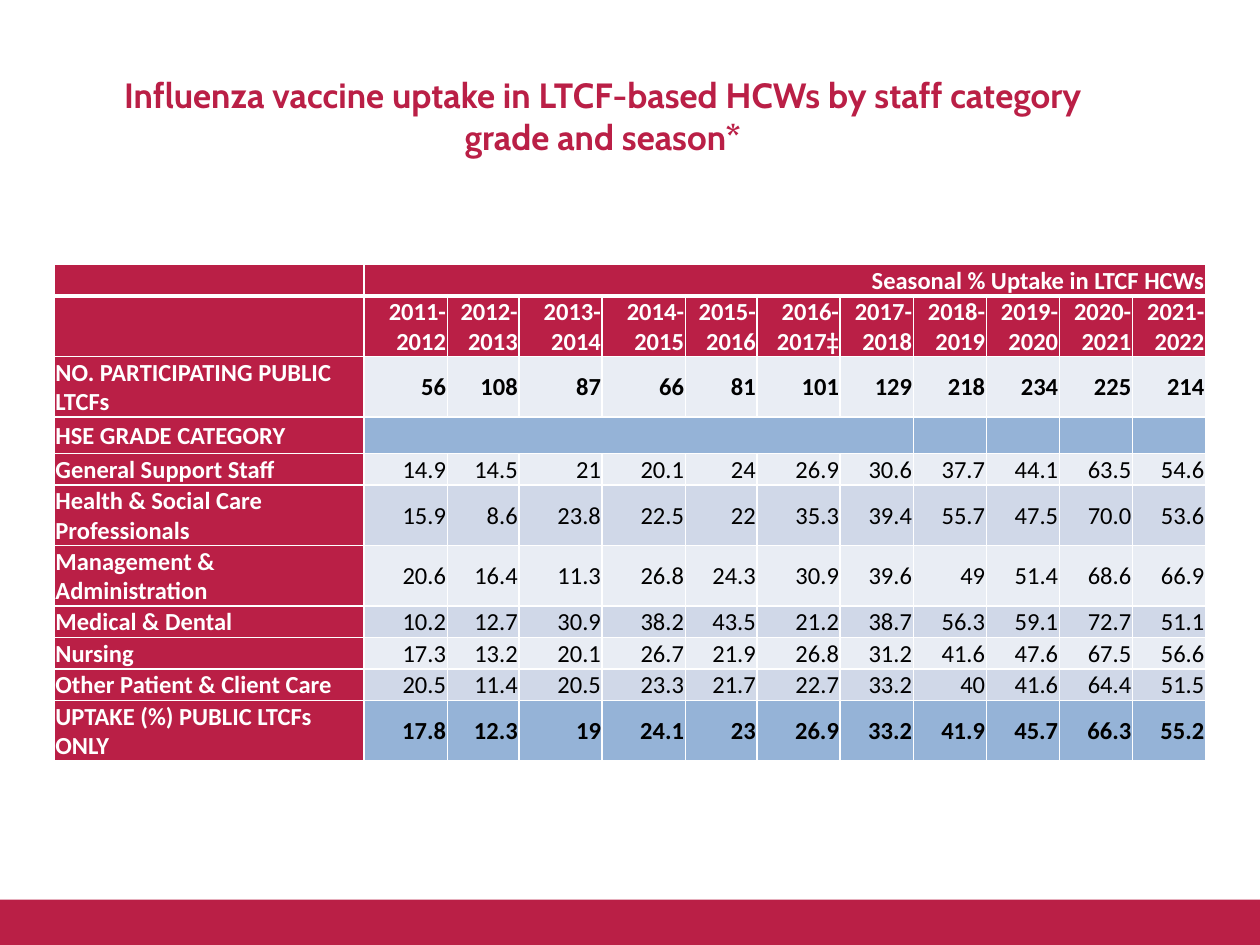
import pptx
import pptx.util
import pptx.dml.color
import pptx.enum.shapes
import pptx.enum.text
import pptx.oxml
import pptx.oxml.ns

Inches = pptx.util.Inches
Pt = pptx.util.Pt
Align = pptx.enum.text.PP_ALIGN
Anchor = pptx.enum.text.MSO_ANCHOR

RED, WHITE, BLACK = "BA1F46", "FFFFFF", "000000"
LIGHT, DARK, BLUE = "E9EDF4", "D0D8E8", "95B3D7"
COLS = [2.46, 0.66, 0.57, 0.66, 0.66, 0.57, 0.66] + [0.58] * 5
YEARS = [f"{y}-{y + 1}" + ("‡" if y == 2016 else "") for y in range(2011, 2022)]
TALL, SHORT = 0.48, 0.25
ROWS = [
    (SHORT, RED, True, "", ["Seasonal % Uptake in LTCF HCWs"]),
    (TALL, RED, True, "", YEARS),
    (TALL, LIGHT, True, "NO. PARTICIPATING PUBLIC LTCFs",
     "56 108 87 66 81 101 129 218 234 225 214".split()),
    (0.29, BLUE, True, "HSE GRADE CATEGORY", []),
    (SHORT, LIGHT, False, "General Support Staff",
     "14.9 14.5 21 20.1 24 26.9 30.6 37.7 44.1 63.5 54.6".split()),
    (TALL, DARK, False, "Health & Social Care Professionals",
     "15.9 8.6 23.8 22.5 22 35.3 39.4 55.7 47.5 70.0 53.6".split()),
    (TALL, LIGHT, False, "Management & Administration",
     "20.6 16.4 11.3 26.8 24.3 30.9 39.6 49 51.4 68.6 66.9".split()),
    (SHORT, DARK, False, "Medical & Dental",
     "10.2 12.7 30.9 38.2 43.5 21.2 38.7 56.3 59.1 72.7 51.1".split()),
    (SHORT, LIGHT, False, "Nursing",
     "17.3 13.2 20.1 26.7 21.9 26.8 31.2 41.6 47.6 67.5 56.6".split()),
    (SHORT, DARK, False, "Other Patient & Client Care",
     "20.5 11.4 20.5 23.3 21.7 22.7 33.2 40 41.6 64.4 51.5".split()),
    (TALL, BLUE, True, "UPTAKE (%) PUBLIC LTCFs ONLY",
     "17.8 12.3 19 24.1 23 26.9 33.2 41.9 45.7 66.3 55.2".split()),
]


def color(code):
    """Turn a hex string into a colour."""
    return pptx.dml.color.RGBColor.from_string(code)


def paint(part, code):
    """Fill a shape or cell with one colour."""
    part.fill.solid()
    part.fill.fore_color.rgb = color(code)


def write(frame, text, size=14, font="Calibri", ink=BLACK, bold=True,
          align=Align.LEFT):
    """Put formatted text in a frame; empty text keeps only its size."""
    para = frame.paragraphs[0]
    para.alignment = align
    if not text:
        end = pptx.oxml.ns.qn("a:endParaRPr")
        para._p.get_or_add_endParaRPr().set("sz", str(size * 100)) if hasattr(
            para._p, "get_or_add_endParaRPr") else para._p.append(
            para._p.makeelement(end, {"sz": str(size * 100)}))
        return
    run = para.add_run()
    run.text = text
    run.font.size = Pt(size)
    run.font.name = font
    run.font.bold = bold
    run.font.color.rgb = color(ink)


def border(cell, top=1, bottom=1):
    """Draw white lines around a cell, widths in points."""
    sides = [("L", 1), ("R", 1), ("T", top), ("B", bottom)]
    space = pptx.oxml.ns.nsdecls("a")
    for spot, (side, width) in enumerate(sides):
        line = pptx.oxml.parse_xml(
            f'<a:ln{side} {space} w="{Pt(width)}"><a:solidFill>'
            f'<a:srgbClr val="{WHITE}"/></a:solidFill></a:ln{side}>')
        cell._tc.get_or_add_tcPr().insert(spot, line)


def title(slide, left, top, width, height):
    """Place the slide title."""
    frame = slide.shapes.add_textbox(left, top, width, height).text_frame
    frame.word_wrap = True
    frame.vertical_anchor = Anchor.MIDDLE
    write(frame, "Influenza vaccine uptake in LTCF-based HCWs by staff "
          "category grade and season*", size=20, font="Cabin", ink=RED,
          align=Align.CENTER)


def footer(slide, left, top, width, height):
    """Place the plain band at the foot."""
    kind = pptx.enum.shapes.MSO_SHAPE.RECTANGLE
    band = slide.shapes.add_shape(kind, left, top, width, height)
    band.shadow.inherit = False
    paint(band, RED)
    band.line.fill.background()


def uptake(slide, left, top, width, height):
    """Place the table of uptake by grade and season."""
    grid = slide.shapes.add_table(
        len(ROWS), len(COLS), left, top, width, height).table
    grid.first_row = grid.horz_banding = False
    for col, size in zip(grid.columns, COLS):
        col.width = Inches(size)
    for r, (size, fill, bold, label, values) in enumerate(ROWS):
        grid.rows[r].height = Inches(size)
        texts = [label] + values
        texts += [""] * (len(COLS) - len(texts))
        for c, text in enumerate(texts):
            cell = grid.cell(r, c)
            back = fill if c else RED
            paint(cell, back)
            border(cell, top=3 if r == 1 else 1, bottom=1 if r else 3)
            cell.margin_left = cell.margin_right = Inches(0.01)
            cell.margin_top, cell.margin_bottom = Inches(0.01), 0
            cell.vertical_anchor = Anchor.MIDDLE
            write(cell.text_frame, text, bold=bold or c == 0,
                  ink=WHITE if back == RED else BLACK,
                  align=Align.RIGHT if c else Align.LEFT)
    grid.cell(0, 1).merge(grid.cell(0, 11))
    grid.cell(3, 1).merge(grid.cell(3, 7))


def main():
    """Build the slide and save it."""
    deck = pptx.Presentation()
    deck.slide_width, deck.slide_height = Inches(10), Inches(7.5)
    slide = deck.slides.add_slide(deck.slide_layouts[6])
    title(slide, Inches(0.83), Inches(0.37), Inches(7.91), Inches(1.09))
    footer(slide, 0, Inches(7.14), Inches(10), Inches(0.36))
    uptake(slide, Inches(0.43), Inches(2.1), Inches(9.13),
           Inches(sum(row[0] for row in ROWS)))
    deck.save("out.pptx")


if __name__ == "__main__":
    main()
